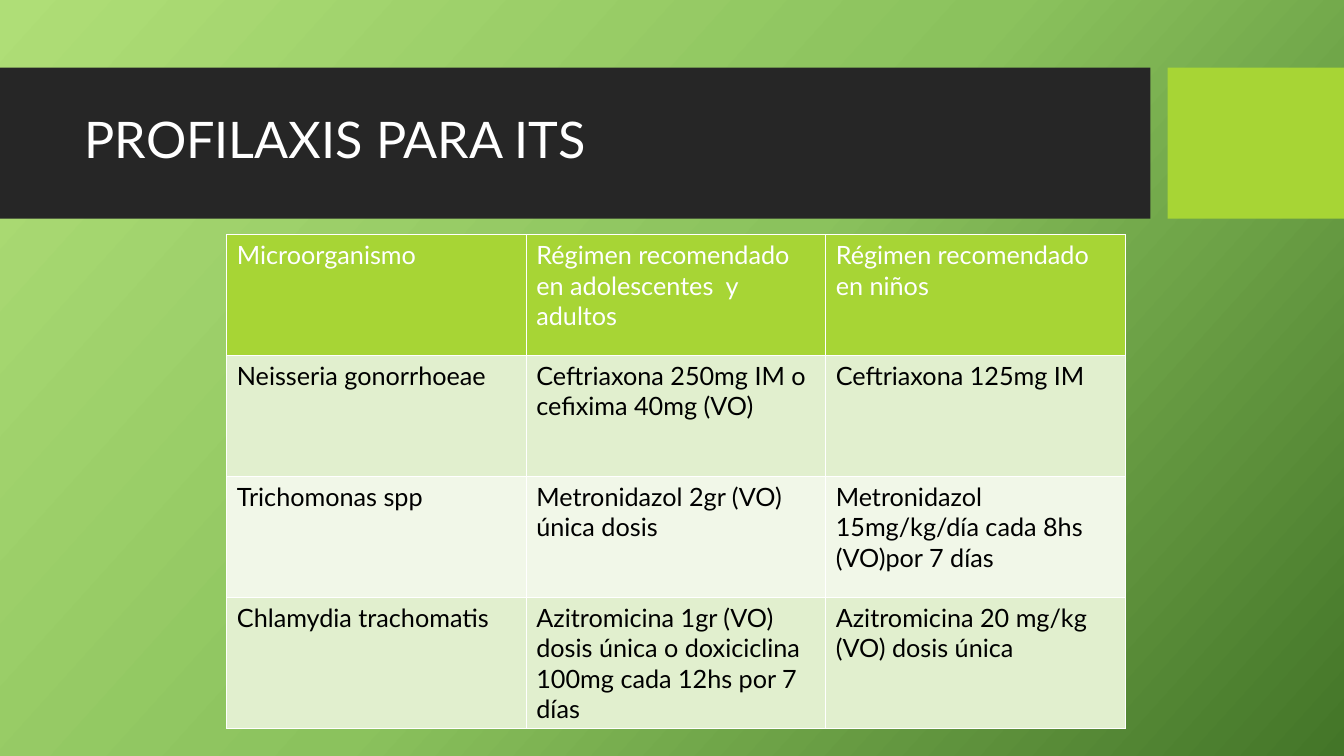
from copy import deepcopy

from lxml.etree import SubElement
from pptx import Presentation
from pptx.dml.color import RGBColor
from pptx.enum.shapes import MSO_SHAPE
from pptx.enum.text import MSO_ANCHOR
from pptx.oxml.ns import qn
from pptx.util import Inches, Pt

FONT = "Lato"
WHITE, BLACK, DARK, LIME = "FFFFFF", "000000", "262626", "A7D535"
ROW_FILLS = ["E1EFCE", "F1F7E8"]
BACKGROUND_STOPS = [(0, "AFDE77"), (0.5, "8BC25D"), (1, "437528")]
REGIMENS = [
    ["Microorganismo", "Régimen recomendado en adolescentes  y adultos",
     "Régimen recomendado en niños"],
    ["Neisseria gonorrhoeae", "Ceftriaxona 250mg IM o cefixima 40mg (VO)",
     "Ceftriaxona 125mg IM"],
    ["Trichomonas spp", "Metronidazol 2gr (VO) única dosis",
     "Metronidazol 15mg/kg/día cada 8hs (VO)por 7 días"],
    ["Chlamydia trachomatis",
     "Azitromicina 1gr (VO) dosis única o doxiciclina 100mg cada 12hs por 7 días",
     "Azitromicina 20 mg/kg (VO) dosis única"],
]


def color(value):
    return RGBColor.from_string(value)


def set_background(slide):
    fill = slide.background.fill
    fill.gradient()
    fill.gradient_angle = 318
    stop_list = slide.element.find(".//" + qn("a:gsLst"))
    stop_list.append(deepcopy(stop_list[-1]))
    for stop, (position, value) in zip(fill.gradient_stops, BACKGROUND_STOPS):
        stop.position = position
        stop.color.rgb = color(value)


def add_block(slide, left, width, fill):
    shape = slide.shapes.add_shape(
        MSO_SHAPE.RECTANGLE, Inches(left), Inches(0.67), Inches(width), Inches(1.5))
    shape.shadow.inherit = False
    shape.fill.solid()
    shape.fill.fore_color.rgb = color(fill)
    shape.line.fill.background()


def write(paragraph, text, size, value):
    run = paragraph.add_run()
    run.text = text
    run.font.name = FONT
    run.font.size = Pt(size)
    run.font.color.rgb = color(value)


def add_title(slide, text):
    box = slide.shapes.add_textbox(Inches(0.74), Inches(0.82), Inches(10.51), Inches(1.18))
    frame = box.text_frame
    frame.word_wrap = True
    frame.vertical_anchor = MSO_ANCHOR.MIDDLE
    paragraph = frame.paragraphs[0]
    paragraph.line_spacing = 0.9
    write(paragraph, text, 36, WHITE)


def add_borders(cell):
    properties = cell._tc.get_or_add_tcPr()
    for side in ("a:lnL", "a:lnR", "a:lnT", "a:lnB"):
        line = SubElement(properties, qn(side), w=str(Pt(1)))
        fill = SubElement(line, qn("a:solidFill"))
        SubElement(fill, qn("a:srgbClr"), val=WHITE)


def add_regimen_table(slide):
    table = slide.shapes.add_table(
        len(REGIMENS), len(REGIMENS[0]),
        Inches(2.25), Inches(2.33), Inches(8.91), Inches(4.8)).table
    for row_index, texts in enumerate(REGIMENS):
        is_header = row_index == 0
        row_fill = LIME if is_header else ROW_FILLS[(row_index - 1) % 2]
        for column_index, text in enumerate(texts):
            cell = table.cell(row_index, column_index)
            add_borders(cell)
            cell.fill.solid()
            cell.fill.fore_color.rgb = color(row_fill)
            paragraph = cell.text_frame.paragraphs[0]
            paragraph.font.bold = False
            write(paragraph, text, 18, WHITE if is_header else BLACK)
            paragraph.runs[0].font.bold = False


def main():
    presentation = Presentation()
    presentation.slide_width = Inches(13.33)
    presentation.slide_height = Inches(7.5)
    slide = presentation.slides.add_slide(presentation.slide_layouts[6])
    set_background(slide)
    add_block(slide, 0, 11.41, DARK)
    add_block(slide, 11.58, 1.75, LIME)
    add_title(slide, "PROFILAXIS PARA ITS")
    add_regimen_table(slide)
    presentation.save("out.pptx")


if __name__ == "__main__":
    main()
